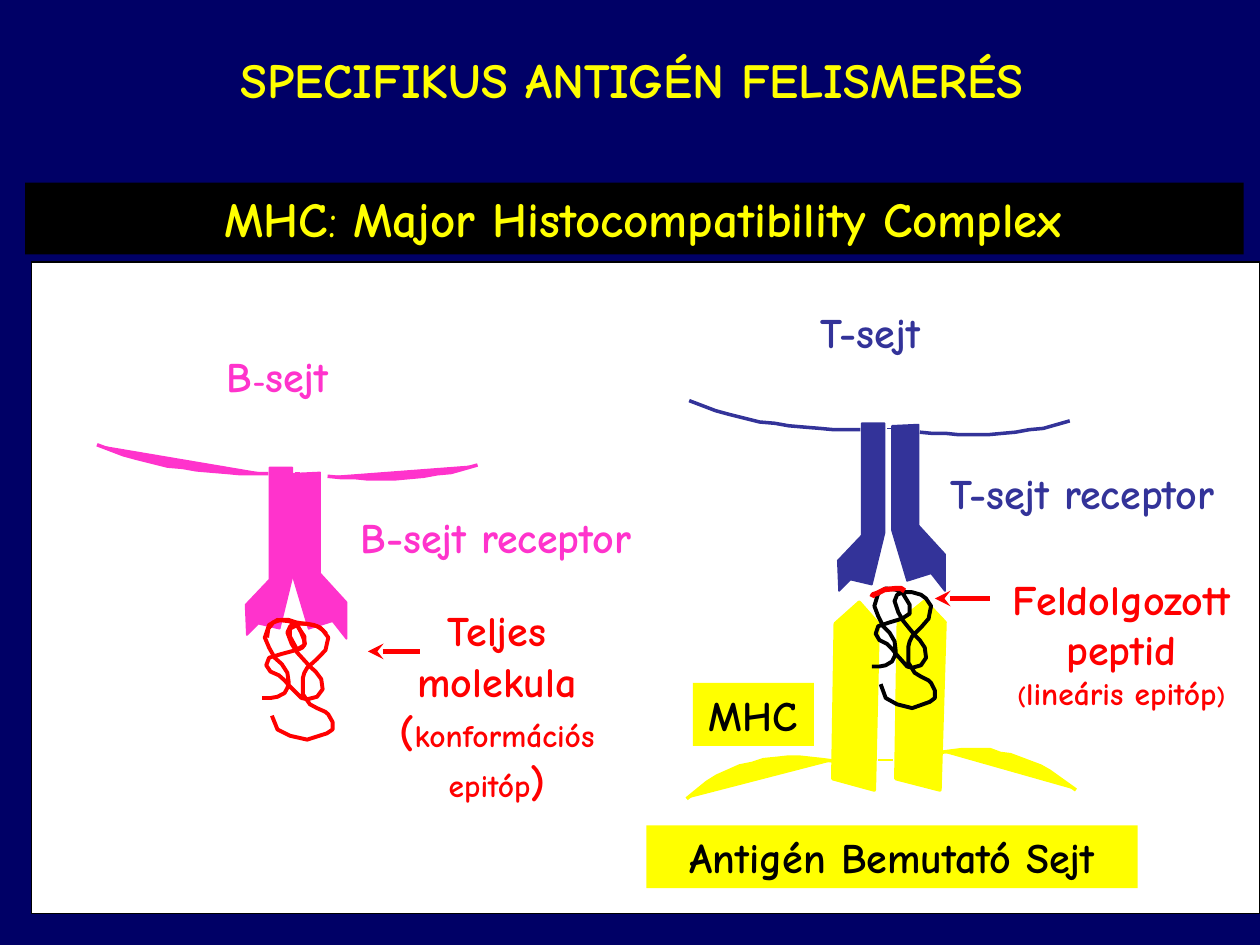
from lxml.etree import SubElement
from pptx import Presentation
from pptx.dml.color import RGBColor
from pptx.enum.shapes import MSO_CONNECTOR, MSO_SHAPE
from pptx.enum.text import MSO_ANCHOR, PP_ALIGN
from pptx.oxml.ns import qn
from pptx.util import Inches, Pt

FONT = "Comic Neue"
NAVY, BLUE, PINK, RED = "000066", "333399", "FF33CC", "FF0000"
YELLOW, BLACK, WHITE = "FFFF00", "000000", "FFFFFF"

# Outlines in inches, measured from the corner of the region they belong to
LEFT_MEMBRANE = [(1.36, 0.23), (1.25, 0.23), (1.14, 0.23), (1.03, 0.22), (0.91, 0.21),
                 (0.79, 0.2), (0.68, 0.18), (0.56, 0.17), (0.44, 0.14), (0.32, 0.11),
                 (0.21, 0.08), (0, 0)]
RIGHT_MEMBRANE = [(1.83, 0.25), (1.93, 0.26), (2.04, 0.26), (2.14, 0.27), (2.26, 0.27),
                  (2.37, 0.27), (2.48, 0.26), (2.59, 0.25), (2.7, 0.23), (2.81, 0.22),
                  (3.02, 0.16)]
LEFT_CHAIN = [(0.01, 1.33), (0.1, 1.24), (0.27, 1.28), (0.37, 0.87), (0.37, 0),
              (0.19, 0), (0.19, 0.89), (0, 1.09)]
RIGHT_CHAIN = [(0.42, 1.32), (0.31, 1.18), (0.12, 1.24), (0, 0.84), (0, 0.01),
               (0.21, 0), (0.21, 0.8), (0.42, 1.03)]
PRESENTER_LEFT = [(1.48, 1.27), (1.4, 1.26), (1.31, 1.25), (1.22, 1.24), (1.12, 1.24),
                  (1.03, 1.25), (0.93, 1.26), (0.84, 1.29), (0.74, 1.31), (0.65, 1.35),
                  (0.56, 1.39), (0.48, 1.44), (0.32, 1.57)]
PRESENTER_RIGHT = [(2.35, 1.2), (2.42, 1.19), (2.5, 1.18), (2.57, 1.18), (2.65, 1.18),
                   (2.73, 1.18), (2.81, 1.21), (2.89, 1.22), (2.97, 1.25), (3.05, 1.28),
                   (3.13, 1.31), (3.2, 1.35), (3.27, 1.4), (3.41, 1.5)]
MHC_CHAINS = [
    [(1.98, 1.41), (2, 0.17), (2.21, 0), (2.37, 0.17), (2.33, 1.5)],
    [(1.48, 1.41), (1.5, 0.18), (1.69, 0.01), (1.84, 0.18), (1.81, 1.5)],
]
MOLECULE_WIDTH = 0.5
MOLECULE = [
    (0, 0.62), (0.06, 0.62), (0.11, 0.61), (0.16, 0.58), (0.18, 0.54), (0.19, 0.5),
    (0.18, 0.42), (0.14, 0.35), (0.09, 0.3), (0.05, 0.22), (0.02, 0.14), (0.05, 0.04),
    (0.11, 0), (0.19, 0.01), (0.24, 0.03), (0.3, 0.13), (0.3, 0.2), (0.24, 0.24),
    (0.14, 0.27), (0.05, 0.3), (0.03, 0.36), (0.06, 0.41), (0.12, 0.44), (0.16, 0.48),
    (0.2, 0.53), (0.28, 0.62), (0.32, 0.63), (0.39, 0.61), (0.43, 0.55), (0.42, 0.47),
    (0.38, 0.41), (0.34, 0.37), (0.25, 0.26), (0.21, 0.19), (0.18, 0.1), (0.2, 0.05),
    (0.25, 0.03), (0.32, 0.03), (0.39, 0.05), (0.43, 0.08), (0.47, 0.14), (0.45, 0.24),
    (0.39, 0.31), (0.32, 0.38), (0.3, 0.42), (0.29, 0.46), (0.29, 0.59), (0.34, 0.67),
    (0.39, 0.7), (0.45, 0.73), (0.47, 0.75), (0.5, 0.81), (0.5, 0.87), (0.46, 0.9),
    (0.32, 0.95), (0.2, 0.92), (0.11, 0.87), (0.07, 0.76)]
MOLECULE_LOOP = [(0.28, 0.04), (0.22, 0.07), (0.22, 0.13), (0.28, 0.24), (0.32, 0.22),
                 (0.34, 0.19), (0.33, 0.15), (0.31, 0.1)]
MOLECULE_ARC = [(0.04, 0.14), (0.05, 0.07), (0.09, 0.02), (0.15, 0), (0.21, 0),
                (0.27, 0.02), (0.33, 0.03), (0.41, 0.04), (0.46, 0.06), (0.51, 0.11)]
EPITOPE = [(0, 0.07), (0.01, 0.05), (0.04, 0.04), (0.1, 0.01), (0.2, 0),
           (0.23, 0), (0.26, 0.02)]


def rgb(color):
    return RGBColor.from_string(color)


def write(para, text, size=24, color=BLACK, bold=True):
    para.alignment = PP_ALIGN.CENTER
    span = para.add_run()
    span.text = text
    span.font.name, span.font.size, span.font.bold = FONT, Pt(size), bold
    span.font.color.rgb = rgb(color)


def fill_frame(shape, lines, wrap=False):
    """Write lines, each a list of (text, format) pairs, from the top of a shape."""
    frame = shape.text_frame
    frame.word_wrap, frame.vertical_anchor = wrap, MSO_ANCHOR.TOP
    for index, spans in enumerate(lines):
        para = frame.add_paragraph() if index else frame.paragraphs[0]
        for text, style in spans:
            write(para, text, **style)


def add_label(page, box, lines, wrap=False):
    fill_frame(page.shapes.add_textbox(*map(Inches, box)), lines, wrap)


def paint(shape, fill=None, line=None, width=1):
    shape.shadow.inherit = False
    if fill:
        shape.fill.solid()
        shape.fill.fore_color.rgb = rgb(fill)
    else:
        shape.fill.background()
    if line:
        shape.line.color.rgb = rgb(line)
        shape.line.width = Pt(width)
    else:
        shape.line.fill.background()


def add_block(page, box, fill, line=None, width=1):
    block = page.shapes.add_shape(MSO_SHAPE.RECTANGLE, *map(Inches, box))
    paint(block, fill, line, width)
    return block


def add_outline(page, corner, points, line, fill=None, width=2, close=False, stretch=1):
    left, top = corner
    spots = [(Inches(left + x * stretch), Inches(top + y)) for x, y in points]
    builder = page.shapes.build_freeform(*spots[0], scale=1.0)
    builder.add_line_segments(spots[1:], close=close)
    paint(builder.convert_to_shape(), fill, line, width)


def add_line(page, left, top, length, color, width=1, arrow=False):
    line = page.shapes.add_connector(MSO_CONNECTOR.STRAIGHT, Inches(left), Inches(top),
                                     Inches(left + length), Inches(top))
    line.line.color.rgb = rgb(color)
    line.line.width = Pt(width)
    if arrow:
        SubElement(line.line._get_or_add_ln(), qn("a:headEnd"), type="stealth")
    SubElement(line._element.spPr, qn("a:effectLst"))


def draw_cell(page, box, color, name, receptor, label_box, right_chain, filled):
    """Draw a membrane with its two-chain receptor and both labels."""
    left, top = box
    for membrane in (LEFT_MEMBRANE, RIGHT_MEMBRANE):
        add_outline(page, box, membrane, color, color if filled else None)
    add_line(page, left + 1.57, top + 0.22, 0.04, color)
    for (x, y), chain in (((1.18, 0.18), LEFT_CHAIN), (right_chain, RIGHT_CHAIN)):
        add_outline(page, (left + x, top + y), chain, color, color, width=1, close=True)
    add_label(page, (left + 0.81, top - 0.8, 1.25, 0.5),
              [[(text, {"size": size, "color": color}) for text, size in name]])
    x, width = label_box
    add_label(page, (left + x, top + 0.48, width, 0.5),
              [[(" ", {}), (receptor, {"color": color})]])


def draw_presenting_cell(page, box):
    left, top = box
    for part, text in (((0, 1.78, 3.9, 0.5), "Antigén Bemutató Sejt"),
                       ((0.37, 0.65, 0.96, 0.5), "MHC")):
        x, y, width, height = part
        block = add_block(page, (left + x, top + y, width, height), YELLOW)
        fill_frame(block, [[(text, {})]])
    add_line(page, left + 1.84, top + 1.26, 0.12, YELLOW)
    for membrane in (PRESENTER_LEFT, PRESENTER_RIGHT):
        add_outline(page, box, membrane, YELLOW, YELLOW)
    for chain in MHC_CHAINS:
        add_outline(page, box, chain, YELLOW, YELLOW, close=True)


def draw_peptide(page, box):
    left, top = box
    red = {"color": RED}
    add_outline(page, box, MOLECULE, BLACK, width=2.25)
    add_line(page, left + 0.5, top + 0.08, 0.44, RED, 3, arrow=True)
    add_outline(page, box, EPITOPE, RED, width=3)
    add_label(page, (left + 0.88, top - 0.17, 2.2, 1.2), [
        [("Feldolgozott peptid", red)],
        [("(", {"size": 14, **red}), ("lineáris epitóp", {"size": 18, **red}),
         (")", {"size": 14, **red})],
    ], wrap=True)


def draw_whole_molecule(page, box):
    left, top = box
    red = {"color": RED}
    small = {"size": 18, **red}
    add_line(page, left + 0.84, top + 0.25, 0.41, RED, 3, arrow=True)
    add_label(page, (left + 0.92, top - 0.17, 1.89, 1.7), [
        [("Teljes molekula", red)],
        [("(", red), ("konformációs", small), (" ", {"size": 20, **red}),
         ("epitóp", small), (")", red)],
    ], wrap=True)
    add_outline(page, box, MOLECULE, RED, width=2.25, stretch=0.56 / MOLECULE_WIDTH)
    add_outline(page, box, MOLECULE_LOOP, RED, width=2.25, close=True)
    add_outline(page, box, MOLECULE_ARC, RED, width=2.25)


def draw_headings(page):
    title = page.shapes.title
    title.left, title.top, title.width, title.height = map(Inches, (0.44, 0, 9.15, 1.25))
    title.text_frame.vertical_anchor = MSO_ANCHOR.MIDDLE
    yellow = {"size": 28, "color": YELLOW}
    write(title.text_frame.paragraphs[0], "SPECIFIKUS ANTIGÉN FELISMERÉS", **yellow)
    band = add_block(page, (0.2, 1.45, 9.67, 0.57), BLACK)
    fill_frame(band, [[(" MHC", yellow), (": ", {"bold": False, **yellow}),
                       ("Major Histocompatibility Complex", yellow)]], wrap=True)


def main():
    deck = Presentation()
    deck.slide_width, deck.slide_height = Inches(10), Inches(7.5)
    page = deck.slides.add_slide(deck.slide_layouts[5])
    page.background.fill.solid()
    page.background.fill.fore_color.rgb = rgb(NAVY)
    add_block(page, (0.25, 2.08, 9.75, 5.17), WHITE, BLACK, 0.75)
    draw_headings(page)
    draw_cell(page, (5.47, 3.18), BLUE, [("T-sejt", 24)], "T-sejt receptor",
              (1.59, 2.94), (1.61, 0.19), filled=False)
    draw_presenting_cell(page, (5.13, 4.77))
    draw_cell(page, (0.77, 3.53), PINK, [("B", 24), ("-", 18), ("sejt", 24)],
              "B-sejt receptor", (1.65, 2.91), (1.56, 0.22), filled=True)
    draw_peptide(page, (6.92, 4.67))
    draw_whole_molecule(page, (2.08, 4.92))
    deck.save("out.pptx")


if __name__ == "__main__":
    main()
